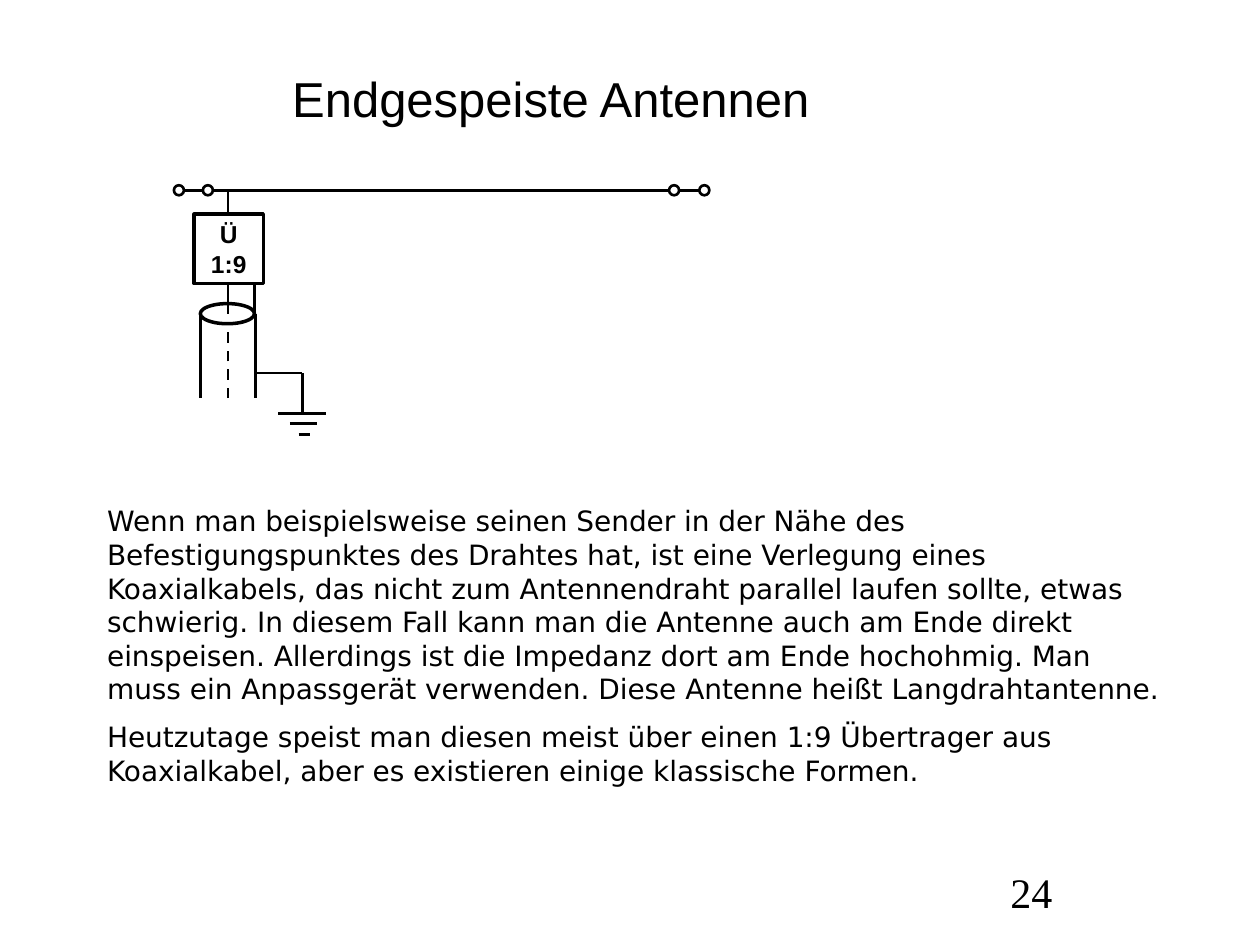
from pptx import Presentation
from pptx.dml.color import RGBColor
from pptx.enum.dml import MSO_LINE_DASH_STYLE as DASH
from pptx.enum.shapes import MSO_CONNECTOR, MSO_SHAPE as SHAPE
from pptx.enum.text import MSO_ANCHOR as ANCHOR, MSO_AUTO_SIZE as FIT, PP_ALIGN as ALIGN
from pptx.oxml.ns import qn
from pptx.util import Inches, Pt

BLACK = RGBColor(0x00, 0x00, 0x00)


class AntennaSlide:
    """Holds the slide and draws its elements in one style."""

    def __init__(self, s):
        self.s = s

    def place(self, sp, x, y, w, h):
        sp.left, sp.top, sp.width, sp.height = map(Inches, (x, y, w, h))

    def style(self, p, font, size, bold=False):
        for r in p.runs:
            r.font.name, r.font.size, r.font.bold = font, Pt(size), bold
            r.font.color.rgb = BLACK

    def title(self, text, *box):
        sp = self.s.shapes.title
        self.place(sp, *box)
        tf = sp.text_frame
        tf.text = text
        tf.vertical_anchor = ANCHOR.MIDDLE
        tf.paragraphs[0].alignment = ALIGN.CENTER
        self.style(tf.paragraphs[0], "Arial", 28)

    def body(self, texts, *box):
        sp = self.s.placeholders[1]
        self.place(sp, *box)
        tf = sp.text_frame
        tf.text = "\n".join(texts)
        tf.auto_size = FIT.SHAPE_TO_FIT_TEXT
        for i, p in enumerate(tf.paragraphs):
            pPr = p._p.get_or_add_pPr()
            pPr.set("marL", "0")
            pPr.set("indent", "0")
            pPr.append(pPr.makeelement(qn("a:buNone"), {}))
            p.space_before = Pt(8 if i else 0)
            self.style(p, "DejaVu Sans", 16)

    def number(self, text, *box):
        tf = self.s.shapes.add_textbox(*map(Inches, box)).text_frame
        tf.word_wrap = True
        tf.text = text
        self.style(tf.paragraphs[0], "Times New Roman", 24)

    def outline(self, kind, x, y, w, h, width=1.5, text=""):
        sp = self.s.shapes.add_shape(kind, *map(Inches, (x, y, w, h)))
        sp.shadow.inherit = False
        sp.fill.background()
        sp.line.color.rgb = BLACK
        sp.line.width = Pt(width)
        if text:
            tf = sp.text_frame
            tf.text = text
            tf.word_wrap = True
            tf.vertical_anchor = ANCHOR.MIDDLE
            tf.paragraphs[0].alignment = ALIGN.CENTER
            self.style(tf.paragraphs[0], "Arial", 14, True)

    def wire(self, x1, y1, x2, y2, width=1.5, dash=None):
        ends = map(Inches, (x1, y1, x2, y2))
        c = self.s.shapes.add_connector(MSO_CONNECTOR.STRAIGHT, *ends)
        c.line.color.rgb = BLACK
        c.line.width = Pt(width)
        if dash:
            c.line.dash_style = dash
        spPr = c._element.spPr
        spPr.append(spPr.makeelement(qn("a:effectLst"), {}))


def main():
    prs = Presentation()
    prs.slide_width, prs.slide_height = Inches(10), Inches(7.5)
    s = AntennaSlide(prs.slides.add_slide(prs.slide_layouts[1]))

    s.title("Endgespeiste Antennen", 0.75, 0.44, 7.24, 0.67)
    s.number("24", 7.92, 6.83, 2.08, 0.5)
    s.body([
        "Wenn man beispielsweise seinen Sender in der Nähe des Befestigungspunktes "
        "des Drahtes hat, ist eine Verlegung eines Koaxialkabels, das nicht zum "
        "Antennendraht parallel laufen sollte, etwas schwierig. In diesem Fall kann "
        "man die Antenne auch am Ende direkt einspeisen. Allerdings ist die Impedanz "
        "dort am Ende hochohmig. Man muss ein Anpassgerät verwenden. Diese Antenne "
        "heißt Langdrahtantenne.",
        "Heutzutage speist man diesen meist über einen 1:9 Übertrager aus "
        "Koaxialkabel, aber es existieren einige klassische Formen.",
    ], 0.75, 3.95, 8.63, 3.13)

    wire_y, ring = 1.51, 0.08
    rings = [1.38, 1.61, 5.31, 5.55]
    for x in rings:
        s.outline(SHAPE.OVAL, x, wire_y - ring / 2, ring, ring)
    for x1, x2 in zip(rings, rings[1:]):
        s.wire(x1 + ring, wire_y, x2, wire_y)

    core, left, right = 1.81, 1.59, 2.02
    box_top, box_bottom, coax_top, coax_bottom = 1.7, 2.25, 2.49, 3.16
    s.outline(SHAPE.RECTANGLE, 1.54, box_top, 0.55, 0.55, 2, "Ü 1:9")
    s.wire(core, box_top, core, wire_y, 1)
    s.outline(SHAPE.OVAL, left, coax_top - 0.08, right - left, 0.16, 2)
    for x in (left, right + 0.01):
        s.wire(x, coax_top, x, coax_bottom)
    for x in (core, right):
        s.wire(x, box_bottom, x, coax_top)
    s.wire(core, coax_bottom, core, 2.57, dash=DASH.DASH)

    earth, tap_y, earth_y = 2.4, 2.96, 3.28
    s.wire(right, tap_y, earth, tap_y)
    s.wire(earth, earth_y, earth, tap_y)
    for x1, x2, y in ((2.21, 2.59, earth_y), (2.3, 2.52, 3.36), (2.37, 2.46, 3.45)):
        s.wire(x1, y, x2, y)

    prs.save("out.pptx")


if __name__ == "__main__":
    main()
